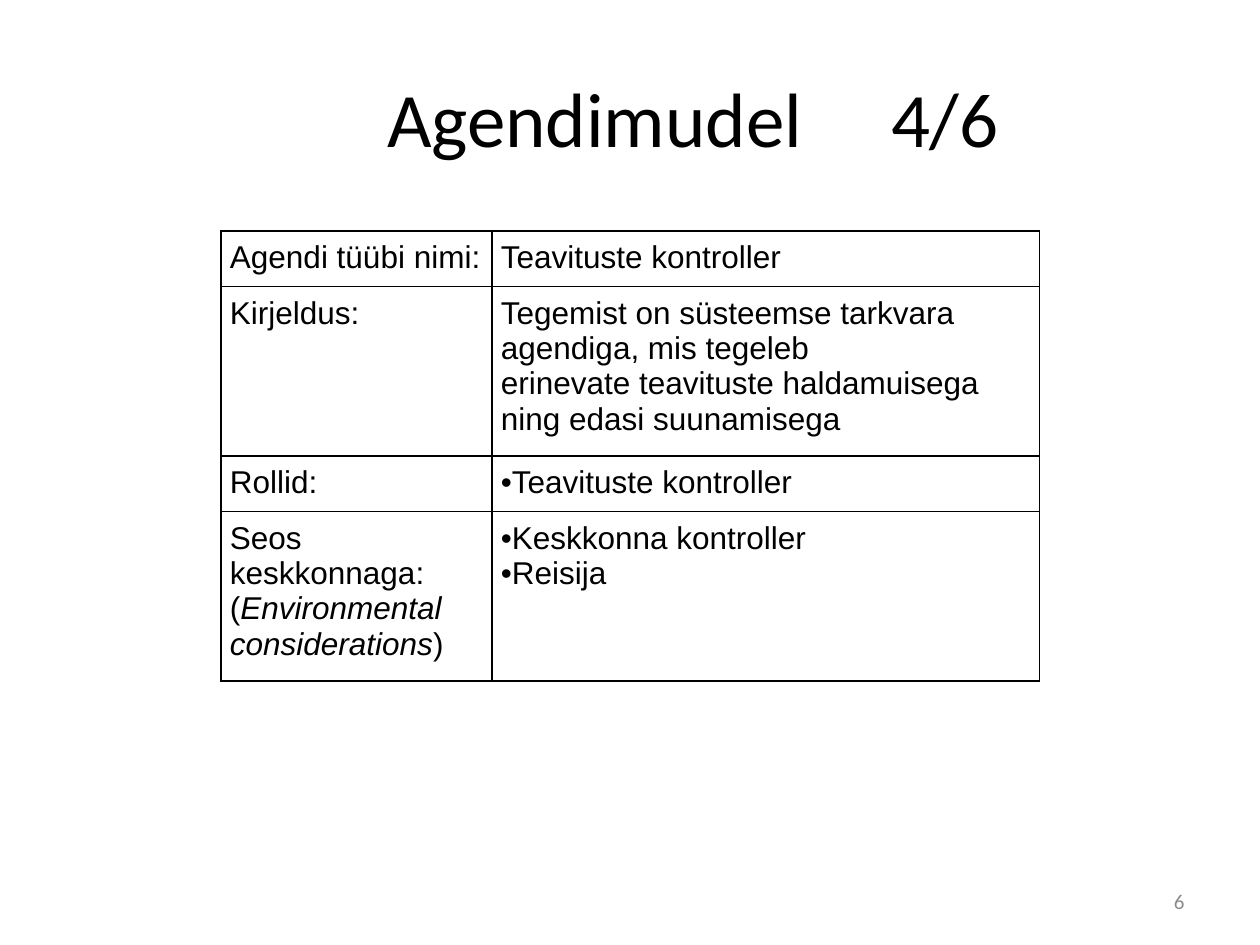
from pptx import Presentation
from pptx.dml.color import RGBColor
from pptx.enum.text import MSO_ANCHOR, PP_ALIGN
from pptx.util import Pt
from lxml.etree import SubElement
from pptx.oxml.ns import qn

PX = 914400 // 126
COLORS = {"text": "000000", "border": "000000", "number": "8C8C8C"}

prs = Presentation()
prs.slide_width, prs.slide_height = 1260 * PX, 945 * PX
s = prs.slides.add_slide(prs.slide_layouts[6])


def style(p, size, font, color):
    for r in p.runs:
        r.font.size = Pt(size)
        r.font.name = font
        r.font.color.rgb = RGBColor.from_string(COLORS[color])


def add_border(cell, side):
    ln = SubElement(cell._tc.get_or_add_tcPr(), qn(f"a:{side}"), w=str(Pt(0.75)))
    fill = SubElement(ln, qn("a:solidFill"))
    SubElement(fill, qn("a:srgbClr"), val=COLORS["border"])


# Title and slide number
for text, box, align, size, color in [
    ("\t\tAgendimudel \t\t4/6", (63, 38, 1134, 157), PP_ALIGN.CENTER, 44, "text"),
    ("6", (903, 876, 294, 50), PP_ALIGN.RIGHT, 12, "number"),
]:
    sp = s.shapes.add_textbox(*(v * PX for v in box))
    tf = sp.text_frame
    tf.word_wrap = True
    tf.vertical_anchor = MSO_ANCHOR.MIDDLE
    tf.text = text
    p = tf.paragraphs[0]
    p.alignment = align
    style(p, size, "Calibri", color)

# Agent table: a leading • marks a bullet, *...* marks italics
rows = [
    (53, ["Agendi tüübi nimi:"], ["Teavituste kontroller"]),
    (160, ["Kirjeldus:"],
     ["Tegemist on süsteemse tarkvara agendiga, mis tegeleb",
      "erinevate teavituste haldamuisega ning edasi suunamisega"]),
    (53, ["Rollid:"], ["•Teavituste kontroller"]),
    (160, ["Seos keskkonnaga:\v(*Environmental considerations*)"],
     ["•Keskkonna kontroller", "•Reisija"]),
]
col_widths = [271, 548]
table_height = sum(row[0] for row in rows)
table = s.shapes.add_table(len(rows), len(col_widths), 221 * PX, 231 * PX,
                           sum(col_widths) * PX, table_height * PX).table
table.first_row = table.horz_banding = False
for col, width in zip(table.columns, col_widths):
    col.width = width * PX

for i, (height, *cells) in enumerate(rows):
    table.rows[i].height = height * PX
    for j, lines in enumerate(cells):
        cell = table.cell(i, j)
        cell.margin_left = cell.margin_right = 9 * PX
        cell.margin_top = cell.margin_bottom = 9 * PX
        for side in ("lnL", "lnR", "lnT", "lnB"):
            add_border(cell, side)
        cell.fill.background()
        tf = cell.text_frame
        for k, line in enumerate(lines):
            p = tf.add_paragraph() if k else tf.paragraphs[0]
            if line.startswith("•"):
                pPr = p._p.get_or_add_pPr()
                SubElement(pPr, qn("a:buFont"), typeface="Arial")
                SubElement(pPr, qn("a:buChar"), char="•")
            first, *rest = line.lstrip("•").split("*")
            p.text = first
            for n, part in enumerate(rest):
                r = p.add_run()
                r.text = part
                r.font.italic = n % 2 == 0
            style(p, 18, "Arial", "text")

prs.save("out.pptx")
